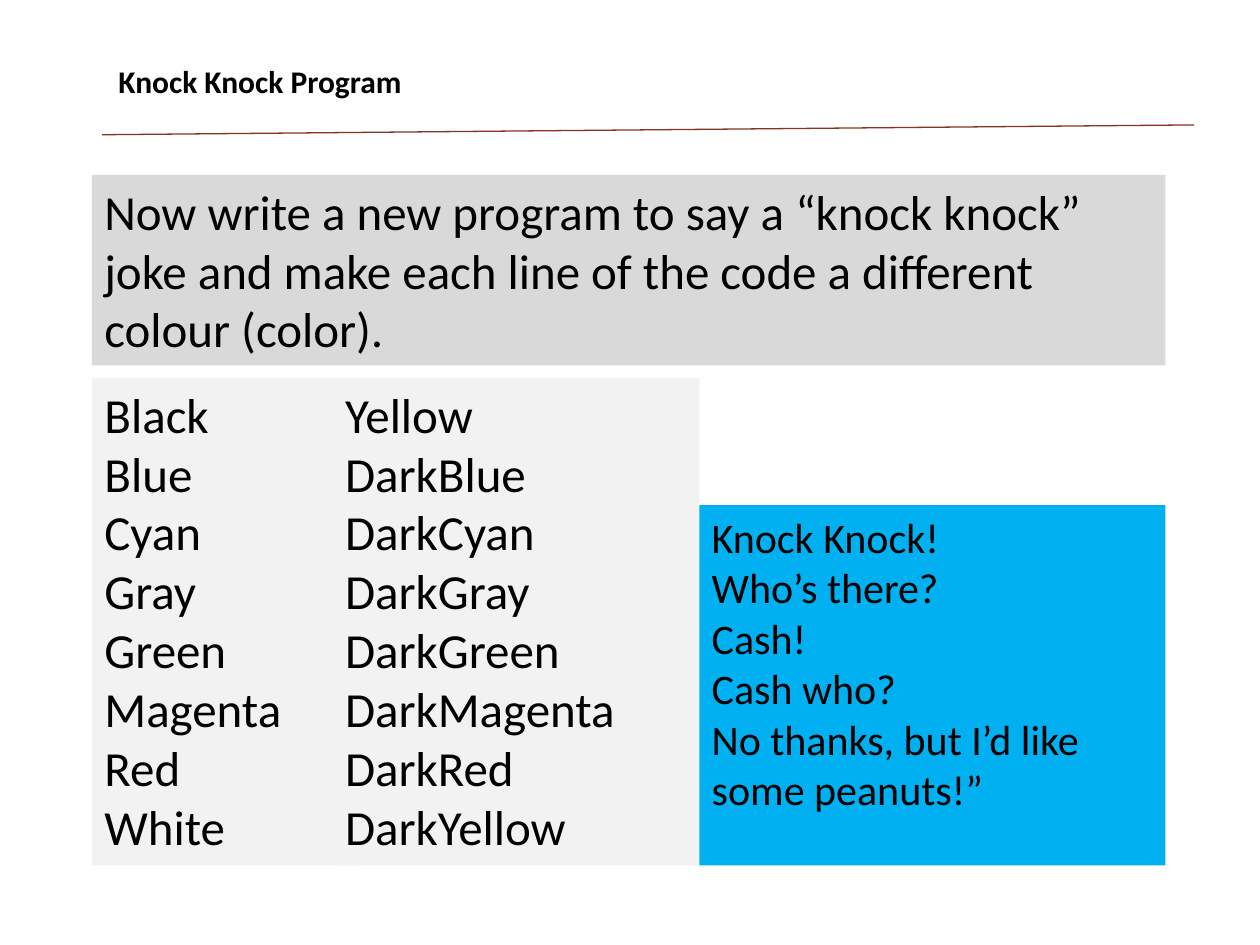
from pptx import Presentation
from pptx.dml.color import RGBColor
from pptx.enum.shapes import MSO_CONNECTOR
from pptx.enum.text import MSO_ANCHOR, MSO_AUTO_SIZE, PP_ALIGN
from pptx.oxml.ns import qn
from pptx.util import Pt
from lxml.etree import SubElement

LEFT = 52.5
RIGHT = 666
LIST_TOP = 216
LIST_HEIGHT = 278.6
JOKE_LEFT = 399.6
JOKE_TOP = 288.7

TASK = [
    "Now write a new program to say a “knock knock” joke and make each line "
    "of the code a different colour (color)."
]
BASIC_COLOURS = ["Black", "Blue", "Cyan", "Gray", "Green", "Magenta", "Red", "White"]
DARK_COLOURS = ["Yellow", "DarkBlue", "DarkCyan", "DarkGray", "DarkGreen",
                "DarkMagenta", "DarkRed", "DarkYellow"]
JOKE = ["Knock Knock!", "Who’s there?", "Cash!", "Cash who?",
        "No thanks, but I’d like some peanuts!”"]


def colour(value):
    return RGBColor.from_string(value)


def place(shape, left, top, width, height):
    shape.left, shape.top = Pt(left), Pt(top)
    shape.width, shape.height = Pt(width), Pt(height)


def write(shape, lines, size=28, bold=False, wrap=True):
    frame = shape.text_frame
    frame.word_wrap = wrap
    frame.auto_size = MSO_AUTO_SIZE.NONE
    frame.vertical_anchor = MSO_ANCHOR.TOP
    for number, line in enumerate(lines):
        para = frame.add_paragraph() if number else frame.paragraphs[0]
        para.alignment = PP_ALIGN.LEFT
        para.space_before = Pt(0)
        span = para.add_run()
        span.text = line
        span.font.name = "Calibri"
        span.font.size = Pt(size)
        span.font.bold = bold
        span.font.color.rgb = colour("000000")


def fill_panel(shape, value):
    shape.fill.solid()
    shape.fill.fore_color.rgb = colour(value)


def add_panel(page, lines, left, top, width, height, fill, size=28):
    box = page.shapes.add_textbox(Pt(left), Pt(top), Pt(width), Pt(height))
    fill_panel(box, fill)
    write(box, lines, size=size)


def fill_list(placeholder, lines, left, width):
    place(placeholder, left, LIST_TOP, width, LIST_HEIGHT)
    fill_panel(placeholder, "F2F2F2")
    write(placeholder, lines)
    for para in placeholder.text_frame.paragraphs:
        properties = para._p.get_or_add_pPr()
        properties.set("marL", "0")
        properties.set("indent", "0")
        SubElement(properties, qn("a:buNone"))


def add_rule(page, start, end):
    rule = page.shapes.add_connector(
        MSO_CONNECTOR.STRAIGHT, *[Pt(value) for value in start + end])
    rule.line.color.rgb = colour("863321")
    rule.line.width = Pt(0.75)
    SubElement(rule._element.spPr, qn("a:effectLst"))


def main():
    deck = Presentation()
    deck.slide_width, deck.slide_height = Pt(720), Pt(540)
    page = deck.slides.add_slide(deck.slide_layouts[3])

    add_rule(page, (58.4, 77), (682.4, 71.4))
    title = page.shapes.title
    place(title, 60.5, 31.7, 177.8, 29)
    write(title, ["Knock Knock Program"], size=18, bold=True, wrap=False)

    add_panel(page, TASK, LEFT, 100, RIGHT - LEFT, 108.9, "D9D9D9")
    fill_list(page.placeholders[1], BASIC_COLOURS, LEFT, 153.4)
    fill_list(page.placeholders[2], DARK_COLOURS, 190, JOKE_LEFT - 190)
    add_panel(page, JOKE, JOKE_LEFT, JOKE_TOP, RIGHT - JOKE_LEFT,
              LIST_TOP + LIST_HEIGHT - JOKE_TOP, "00B0F0", size=24)

    deck.save("out.pptx")


if __name__ == "__main__":
    main()
